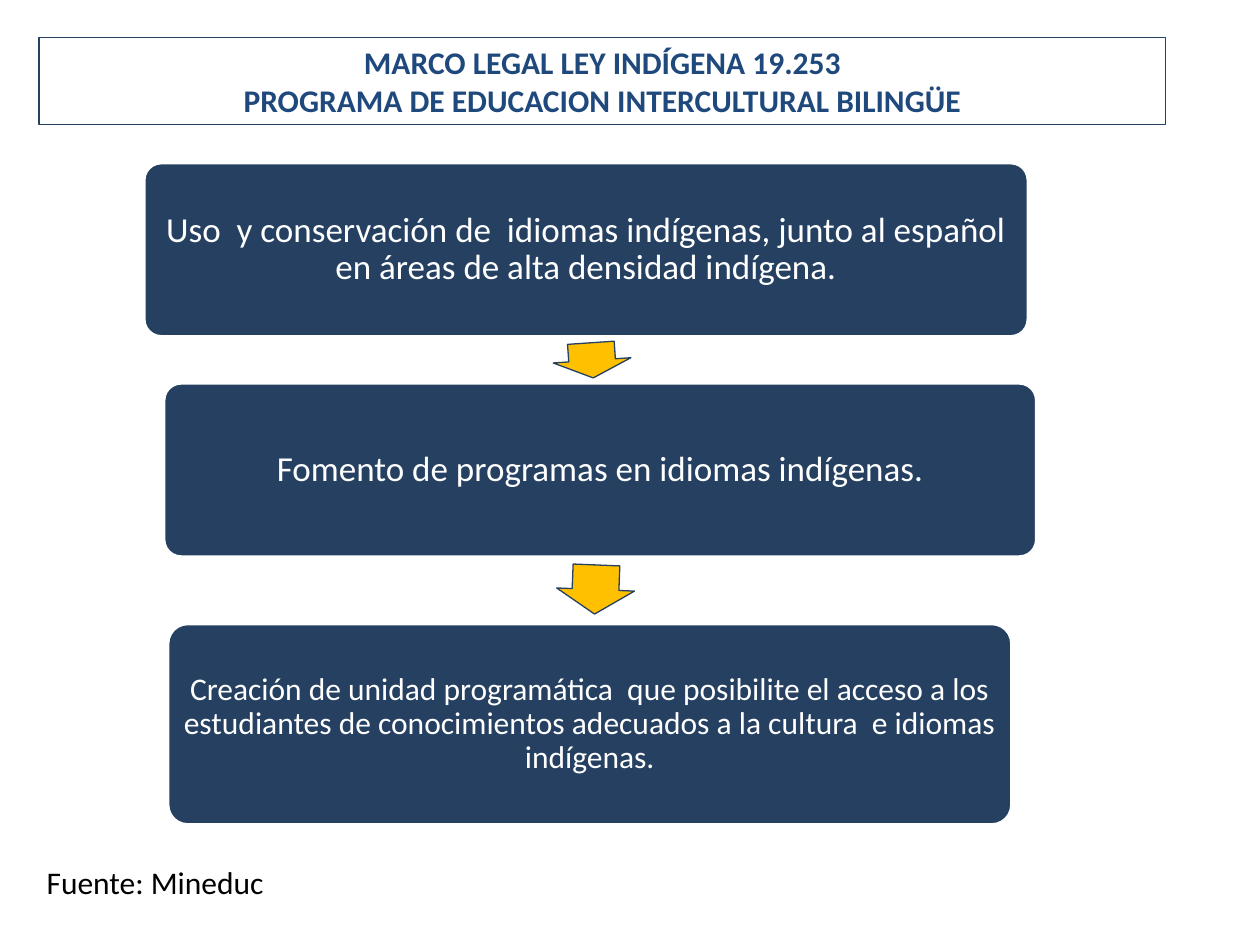
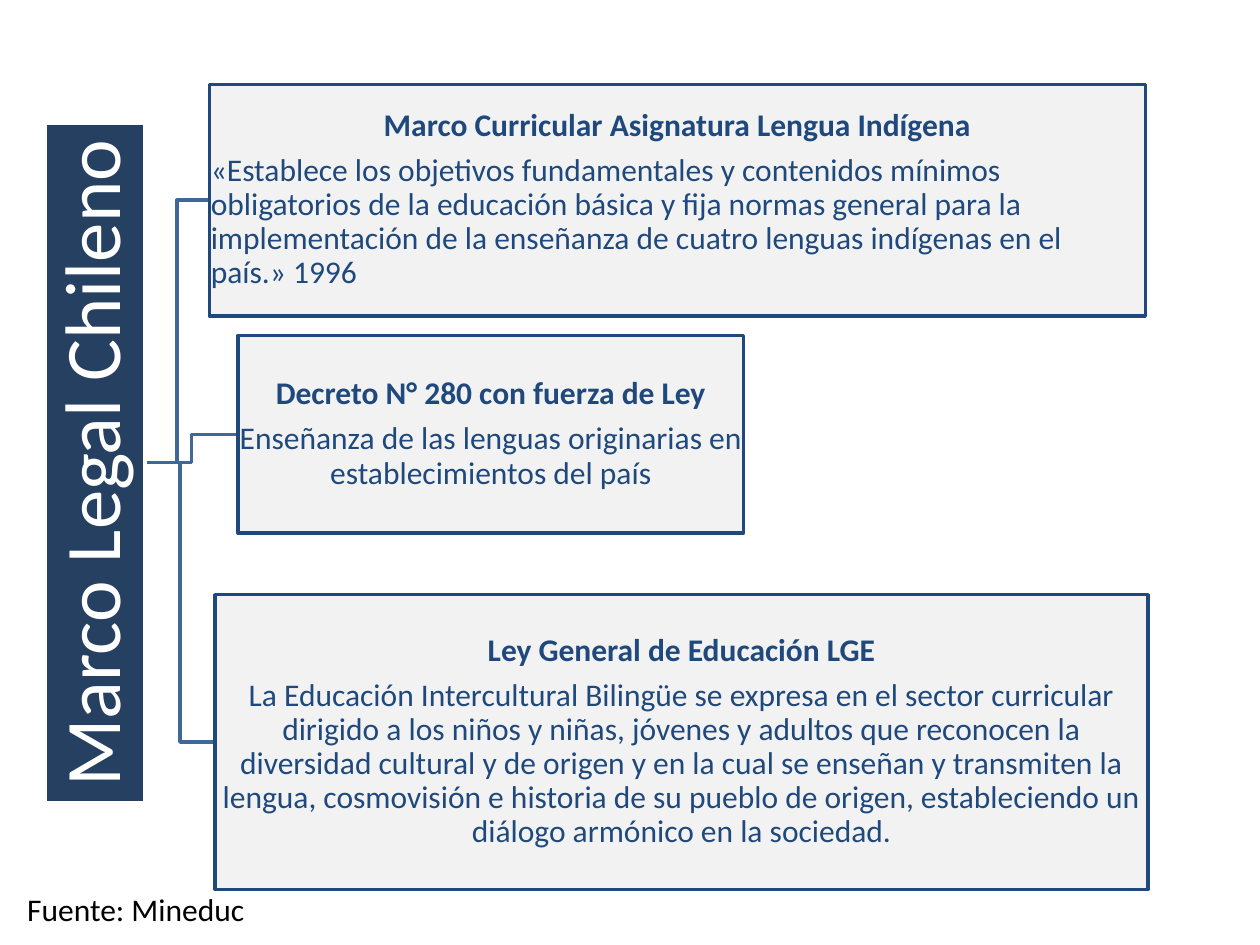
from pptx import Presentation
from pptx.dml.color import RGBColor
from pptx.enum.shapes import MSO_SHAPE as Shape
from pptx.enum.text import MSO_ANCHOR as Anchor, PP_ALIGN as Align
from pptx.util import Cm, Pt

NAVY, BLUE, STEEL = "254061", "1F497D", "3F6797"
GOLD, PALE, WHITE, BLACK = "FFC000", "F2F2F2", "FFFFFF", "000000"


def rgb(value):
    return RGBColor.from_string(value)


class Deck:
    font = "Calibri"

    def __init__(self):
        self.prs = Presentation()
        self.prs.slide_width, self.prs.slide_height = Cm(25.4), Cm(19.05)
        self.shapes = None

    def new_slide(self):
        self.shapes = self.prs.slides.add_slide(self.prs.slide_layouts[6]).shapes

    def outline(self, shape, color, width):
        shape.line.color.rgb = rgb(color)
        shape.line.width = Pt(width)

    def block(self, kind, box, fill, line, width=2, rotation=0):
        """Add a preset shape; box is left, top, width, height in cm."""
        shape = self.shapes.add_shape(kind, *map(Cm, box))
        shape.shadow.inherit = False
        shape.rotation = rotation
        shape.fill.solid()
        shape.fill.fore_color.rgb = rgb(fill)
        self.outline(shape, line, width)
        return shape

    def style(self, paragraph, size, color, bold=False, align=Align.CENTER):
        paragraph.alignment = align
        for run in paragraph.runs:
            run.font.name, run.font.size, run.font.bold = self.font, Pt(size), bold
            run.font.color.rgb = rgb(color)

    def fill_text(self, shape, text, size, color, inset):
        frame = shape.text_frame
        frame.word_wrap, frame.vertical_anchor = True, Anchor.MIDDLE
        frame.margin_left = frame.margin_right = Cm(inset)
        frame.margin_top = frame.margin_bottom = Cm(inset)
        frame.text = text
        for paragraph in frame.paragraphs:
            self.style(paragraph, size, color)
            paragraph.line_spacing = 0.9
            paragraph.space_after = Pt(size * 0.35)

    def title(self, text):
        box = self.shapes.add_textbox(Cm(0.79), Cm(0.76), Cm(22.71), Cm(1.75))
        self.outline(box, NAVY, 0.75)
        frame = box.text_frame
        frame.word_wrap, frame.vertical_anchor = True, Anchor.MIDDLE
        frame.text = text
        for paragraph in frame.paragraphs:
            self.style(paragraph, 18, BLUE, bold=True)

    def step(self, box, text, size):
        card = self.block(Shape.ROUNDED_RECTANGLE, box, NAVY, WHITE)
        card.adjustments[0] = 0.1
        self.fill_text(card, text, size, WHITE, 0.18)

    def arrow(self, box, rotation):
        arrow = self.block(Shape.RIGHT_ARROW, box, GOLD, NAVY, 0.75, rotation)
        arrow.adjustments[0], arrow.adjustments[1] = 0.6, 0.5

    def vertical_label(self, box, text):
        bar = self.block(Shape.RECTANGLE, box, NAVY, WHITE, rotation=270)
        self.fill_text(bar, text, 45, WHITE, 0.08)

    def law(self, box, heading, body, body_align):
        card = self.block(Shape.RECTANGLE, box, PALE, BLUE)
        self.fill_text(card, f"{heading}\n{body}", 18, BLUE, 0.03)
        first, second = card.text_frame.paragraphs
        self.style(first, 18, BLUE, bold=True)
        second.alignment = body_align

    def branch(self, root, box):
        """Draw an elbow from root to the middle of the box's left side."""
        (x, y), (left, top, _, height) = root, box
        middle, end = (x + left) / 2, top + height / 2
        builder = self.shapes.build_freeform(Cm(x), Cm(y))
        points = [(middle, y), (middle, end), (left, end)]
        builder.add_line_segments([(Cm(px), Cm(py)) for px, py in points], close=False)
        elbow = builder.convert_to_shape()
        elbow.shadow.inherit = False
        elbow.fill.background()
        self.outline(elbow, STEEL, 2)

    def source(self, left, top):
        box = self.shapes.add_textbox(Cm(left), Cm(top), Cm(5.41), Cm(1.02))
        box.text_frame.word_wrap = True
        box.text_frame.text = "Fuente: Mineduc"
        self.style(box.text_frame.paragraphs[0], 18, BLACK, align=Align.LEFT)


def indigenous_law(deck):
    deck.new_slide()
    deck.title("MARCO LEGAL LEY INDÍGENA 19.253\n"
               "PROGRAMA DE EDUCACION INTERCULTURAL BILINGÜE")
    deck.step((2.9, 3.28, 17.83, 3.51),
              "Uso  y conservación de  idiomas indígenas, junto al español "
              "en áreas de alta densidad indígena.", 20)
    deck.arrow((11.58, 6.48, 0.71, 1.57), 86.1)
    deck.step((3.3, 7.72, 17.6, 3.51), "Fomento de programas en idiomas indígenas.", 20)
    deck.arrow((11.51, 11.1, 0.99, 1.57), 92.3)
    deck.step((3.38, 12.57, 17.02, 4.06),
              "Creación de unidad programática  que posibilite el acceso a los "
              "estudiantes de conocimientos adecuados a la cultura  e idiomas indígenas.", 18)
    deck.source(0.69, 17.27)


def chilean_framework(deck):
    laws = [
        ((4.34, 11.99, 18.8, 5.94), "Ley General de Educación LGE",
         "La Educación Intercultural Bilingüe se expresa en el sector curricular "
         "dirigido a los niños y niñas, jóvenes y adultos que reconocen la diversidad "
         "cultural y de origen y en la cual se enseñan y transmiten la lengua, "
         "cosmovisión e historia de su pueblo de origen, estableciendo un diálogo "
         "armónico en la sociedad.", Align.CENTER),
        ((4.22, 1.7, 18.87, 4.67), "Marco Curricular Asignatura Lengua Indígena",
         "«Establece los objetivos fundamentales y contenidos mínimos obligatorios de "
         "la educación básica y fija normas general para la implementación de la "
         "enseñanza de cuatro lenguas indígenas en el país.» 1996", Align.LEFT),
        ((4.8, 6.76, 10.19, 3.99), "Decreto N° 280 con fuerza de Ley",
         "Enseñanza de las lenguas originarias en establecimientos del país",
         Align.CENTER),
    ]
    deck.new_slide()
    for box, *_ in laws:
        deck.branch((2.92, 9.32), box)
    deck.vertical_label((-4.93, 8.33, 13.69, 2.01), "Marco Legal Chileno")
    for law in laws:
        deck.law(*law)
    deck.source(0.3, 17.81)


def main():
    deck = Deck()
    indigenous_law(deck)
    chilean_framework(deck)
    deck.prs.save("out.pptx")


if __name__ == "__main__":
    main()
